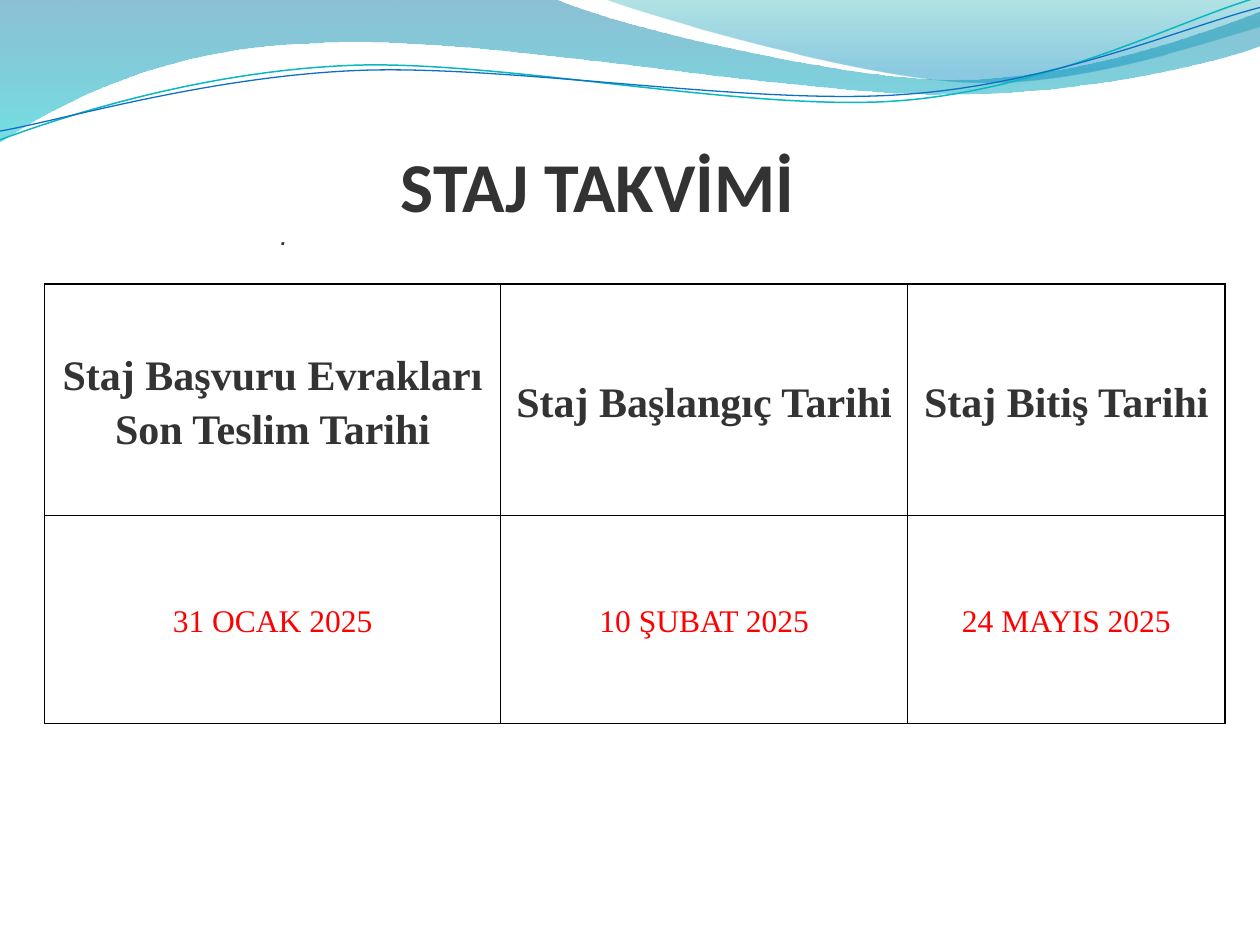
from dataclasses import dataclass
from math import cos, radians, sin
from typing import Optional

from lxml.etree import SubElement
from pptx import Presentation
from pptx.dml.color import RGBColor
from pptx.enum.text import MSO_ANCHOR, MSO_AUTO_SIZE, PP_ALIGN
from pptx.oxml.ns import qn
from pptx.util import Pt

Point = tuple[float, float]


@dataclass(frozen=True)
class Theme:
    ink: str = "333333"
    date: str = "FF0000"
    border: str = "000000"
    title_font: str = "Calibri"
    mark_font: str = "Arial"
    table_font: str = "Times New Roman"
    title_size: float = 40
    mark_size: float = 11
    heading_size: float = 24
    date_size: float = 18
    border_width: float = 1


@dataclass(frozen=True)
class Stop:
    position: float
    color: str
    opacity: int


@dataclass(frozen=True)
class Wave:
    """A step holds one point for a line, or three for a Bézier curve."""
    start: Point
    steps: tuple[tuple[Point, ...], ...]
    stops: tuple[Stop, ...] = ()
    line_color: str = ""
    line_width: float = 0
    pivot: Point = (0, 0)
    tilt: float = 0


@dataclass(frozen=True)
class Milestone:
    heading: str
    date: str
    width: float


THEME = Theme()

WAVES = (
    Wave((0, 0), (
        ((317, -0.7),),
        ((342.7, 12.2), (478.1, 45.4), (545.8, 45.4)),
        ((614.2, 45.4), (689.8, 18.7), (720, 6.5)),
        ((720.7, 25.9),),
        ((707.8, 31.7), (626.4, 54.7), (537.1, 54)),
        ((447.8, 54), (275, 20.2), (185, 24.5)),
        ((92.9, 25.9), (33.1, 59.8), (-0.7, 81.4)),
        ((0, 0),),
    ), stops=(Stop(0, "0074A1", 45), Stop(1, "00C6CF", 55))),
    Wave((344.9, -0.7), (
        ((366.5, 7.9), (491, 44.6), (553.7, 46.8)),
        ((616.3, 49.7), (691.9, 23), (720, 15.1)),
        ((720, 0),),
        ((344.9, -0.7),),
    ), stops=(Stop(0, "00A1A9", 30), Stop(0.8, "008BBF", 45))),
    Wave((0, 79.9), (
        ((34.6, 67), (113.8, 41), (199.4, 37.4)),
        ((284.4, 33.8), (427, 64.1), (513.4, 57.6)),
        ((599.8, 51.1), (675.4, 10.8), (718.6, -1.4)),
    ), line_color="0AB8BF", line_width=0.85, pivot=(359.3, 41.4), tilt=-2.7),
    Wave((0, 74.9), (
        ((33.8, 69.1), (118.1, 43.9), (203.8, 40.3)),
        ((290.2, 36.7), (429.8, 60.5), (516.2, 54)),
        ((601.9, 48.2), (677.5, 15.1), (720, 4.3)),
    ), line_color="0F6FC6", line_width=0.75, pivot=(359.6, 42.5), tilt=-2.7),
)

MILESTONES = (
    Milestone("Staj Başvuru Evrakları Son Teslim Tarihi", "31 OCAK 2025", 260.6),
    Milestone("Staj Başlangıç Tarihi", "10 ŞUBAT 2025", 232.6),
    Milestone("Staj Bitiş Tarihi", "24 MAYIS 2025", 181.4),
)
ROW_HEIGHTS = (132.5, 118.8)


def write(paragraph, text: str, *, size: float, font: str, color: str = THEME.ink,
          bold: bool = False, italic: bool = False,
          align: PP_ALIGN = PP_ALIGN.CENTER, indent: float = 0,
          line_spacing: Optional[float] = None, space_after: float = 0) -> None:
    run = paragraph.add_run()
    run.text = text
    run.font.size, run.font.name = Pt(size), font
    run.font.bold, run.font.italic = bold, italic
    run.font.color.rgb = RGBColor.from_string(color)
    paragraph.alignment = align
    paragraph.line_spacing = line_spacing
    paragraph.space_after = Pt(space_after)
    if indent:
        properties = paragraph._p.get_or_add_pPr()
        properties.set("marL", "0")
        properties.set("indent", str(Pt(indent)))


def level(point: Point, wave: Wave) -> Point:
    """Place a point as it lies before the wave is tilted about its pivot."""
    angle = radians(-wave.tilt)
    x, y = point[0] - wave.pivot[0], point[1] - wave.pivot[1]
    return (Pt(wave.pivot[0] + x * cos(angle) - y * sin(angle)),
            Pt(wave.pivot[1] + x * sin(angle) + y * cos(angle)))


def bend(band, wave: Wave) -> None:
    """Join each run of three segments that belongs to a curve."""
    segments = iter(band._element.findall(".//" + qn("a:lnTo")))
    for step in wave.steps:
        parts = [next(segments) for _ in step]
        if len(parts) == 3:
            curve = parts[0].makeelement(qn("a:cubicBezTo"), {})
            parts[0].addprevious(curve)
            for part in parts:
                curve.append(part[0])
                part.getparent().remove(part)


def draw_wave(slide, wave: Wave) -> None:
    builder = slide.shapes.build_freeform(*level(wave.start, wave))
    builder.add_line_segments(
        [level(point, wave) for step in wave.steps for point in step],
        close=bool(wave.stops))
    band = builder.convert_to_shape()
    bend(band, wave)
    band.rotation = wave.tilt
    band.shadow.inherit = False
    if not wave.stops:
        band.fill.background()
        band.line.color.rgb = RGBColor.from_string(wave.line_color)
        band.line.width = Pt(wave.line_width)
        return
    band.line.fill.background()
    band.fill.gradient()
    band.fill.gradient_angle = 270
    for target, stop in zip(band.fill.gradient_stops, wave.stops):
        target.position = stop.position
        target.color.rgb = RGBColor.from_string(stop.color)
        tint = target._gs.find(qn("a:srgbClr"))
        SubElement(tint, qn("a:alpha"), val=str(stop.opacity * 1000))


def add_borders(cell) -> None:
    properties = cell._tc.get_or_add_tcPr()
    for index, side in enumerate(("lnL", "lnR", "lnT", "lnB")):
        edge = properties.makeelement(qn(f"a:{side}"), {"w": str(Pt(THEME.border_width))})
        properties.insert(index, edge)
        fill = SubElement(edge, qn("a:solidFill"))
        SubElement(fill, qn("a:srgbClr"), val=THEME.border)


def draw_cell(cell, text: str, *, size: float, color: str, bold: bool) -> None:
    cell.fill.background()
    cell.vertical_anchor = MSO_ANCHOR.MIDDLE
    cell.margin_left = cell.margin_right = Pt(5.4)
    cell.margin_top = cell.margin_bottom = Pt(0)
    write(cell.text_frame.paragraphs[0], text, size=size, font=THEME.table_font,
          color=color, bold=bold, line_spacing=1.15, space_after=8.3)
    add_borders(cell)


def draw_calendar(slide) -> None:
    calendar = slide.shapes.add_table(
        len(ROW_HEIGHTS), len(MILESTONES), Pt(25.5), Pt(162.2),
        Pt(sum(m.width for m in MILESTONES)), Pt(sum(ROW_HEIGHTS))).table
    calendar.first_row = calendar.horz_banding = False
    for row, height in zip(calendar.rows, ROW_HEIGHTS):
        row.height = Pt(height)
    for column, milestone in enumerate(MILESTONES):
        calendar.columns[column].width = Pt(milestone.width)
        draw_cell(calendar.cell(0, column), milestone.heading,
                  size=THEME.heading_size, color=THEME.ink, bold=True)
        draw_cell(calendar.cell(1, column), milestone.date,
                  size=THEME.date_size, color=THEME.date, bold=False)


def draw_title(slide) -> None:
    frame = slide.shapes.add_textbox(Pt(121.7), Pt(77.3), Pt(475.9), Pt(69.1)).text_frame
    frame.word_wrap = True
    frame.auto_size = MSO_AUTO_SIZE.SHAPE_TO_FIT_TEXT
    frame.vertical_anchor = MSO_ANCHOR.MIDDLE
    write(frame.paragraphs[0], "STAJ TAKVİMİ", size=THEME.title_size,
          font=THEME.title_font, bold=True, align=PP_ALIGN.JUSTIFY, indent=100.3)
    write(frame.add_paragraph(), ".", size=THEME.mark_size, font=THEME.mark_font,
          bold=True, italic=True, align=PP_ALIGN.JUSTIFY, indent=31.7)


def main() -> None:
    presentation = Presentation()
    presentation.slide_width, presentation.slide_height = Pt(720), Pt(540)
    slide = presentation.slides.add_slide(presentation.slide_layouts[6])
    # Waves along the top edge
    for wave in WAVES:
        draw_wave(slide, wave)
    # Internship calendar and its title
    draw_calendar(slide)
    draw_title(slide)
    presentation.save("out.pptx")


if __name__ == "__main__":
    main()
